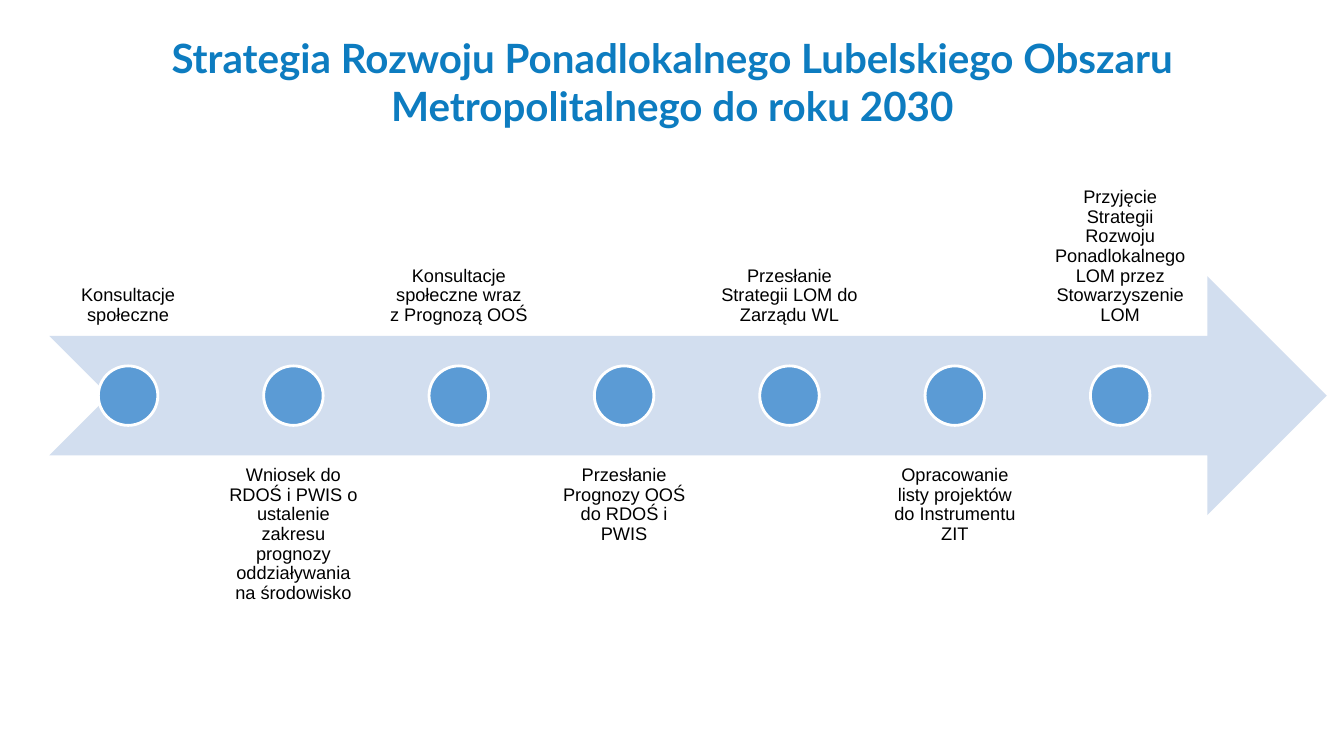
from pptx import Presentation
from pptx.dml.color import RGBColor
from pptx.enum.shapes import MSO_SHAPE
from pptx.enum.text import MSO_ANCHOR, PP_ALIGN
from pptx.util import Inches, Pt

ARROW, DOT = MSO_SHAPE.NOTCHED_RIGHT_ARROW, MSO_SHAPE.OVAL
TOP, BOTTOM = MSO_ANCHOR.TOP, MSO_ANCHOR.BOTTOM
CENTER = PP_ALIGN.CENTER

BLUE = RGBColor(0x0D, 0x7C, 0xC0)
PALE = RGBColor(0xD2, 0xDE, 0xEF)
MID = RGBColor(0x5B, 0x9B, 0xD5)
WHITE = RGBColor(0xFF, 0xFF, 0xFF)
BLACK = RGBColor(0, 0, 0)

# Content
TITLE = "Strategia Rozwoju Ponadlokalnego Lubelskiego Obszaru Metropolitalnego do roku 2030"
STEPS = [
    "Konsultacje społeczne",
    "Wniosek do RDOŚ i PWIS o ustalenie zakresu prognozy oddziaływania na środowisko",
    "Konsultacje społeczne wraz z Prognozą OOŚ",
    "Przesłanie Prognozy OOŚ do RDOŚ i PWIS",
    "Przesłanie Strategii LOM do Zarządu WL",
    "Opracowanie listy projektów do Instrumentu ZIT",
    "Przyjęcie Strategii Rozwoju Ponadlokalnego LOM przez Stowarzyszenie LOM",
]

# Layout in inches
LEFT, MIDDLE = 0.49, 3.925
STEP, WIDTH, HEIGHT = 1.64, 1.56, 2.37
SIZE = 0.59
ABOVE, BELOW = 0.96, 4.52

deck = Presentation()
deck.slide_width, deck.slide_height = Inches(13.33), Inches(7.5)
slide = deck.slides.add_slide(deck.slide_layouts[6])


def add_text(text, box, anchor, inset, font, size, color, bold=False, spacing=1.0):
    frame = slide.shapes.add_textbox(*map(Inches, box)).text_frame
    frame.word_wrap = True
    frame.vertical_anchor = anchor
    frame.margin_left = frame.margin_right = Inches(0.1)
    frame.margin_top = frame.margin_bottom = Inches(inset)
    frame.text = text
    para = frame.paragraphs[0]
    para.alignment = CENTER
    para.line_spacing = spacing
    style = para.runs[0].font
    style.name, style.size, style.bold = font, Pt(size), bold
    style.color.rgb = color


def add_mark(kind, box, fill):
    shape = slide.shapes.add_shape(kind, *map(Inches, box))
    shape.shadow.inherit = False
    shape.fill.solid()
    shape.fill.fore_color.rgb = fill
    shape.line.fill.background()
    return shape


# Title and arrow
add_text(TITLE, (0.92, 0.28, 11.5, 1.45), TOP, 0.05, "Lato", 28.8, BLUE, bold=True)
add_mark(ARROW, (LEFT, MIDDLE - HEIGHT / 2, 12.67, HEIGHT), PALE)

# Steps alternate above and below the arrow
for i, step in enumerate(STEPS):
    x = LEFT + i * STEP
    y, anchor = (BELOW, TOP) if i % 2 else (ABOVE, BOTTOM)
    add_text(step, (x, y, WIDTH, HEIGHT), anchor, 0.1, "Arial", 13, BLACK, spacing=0.9)
    dot = add_mark(DOT, (x + (WIDTH - SIZE) / 2, MIDDLE - SIZE / 2, SIZE, SIZE), MID)
    dot.line.color.rgb = WHITE
    dot.line.width = Pt(2)

deck.save("out.pptx")
